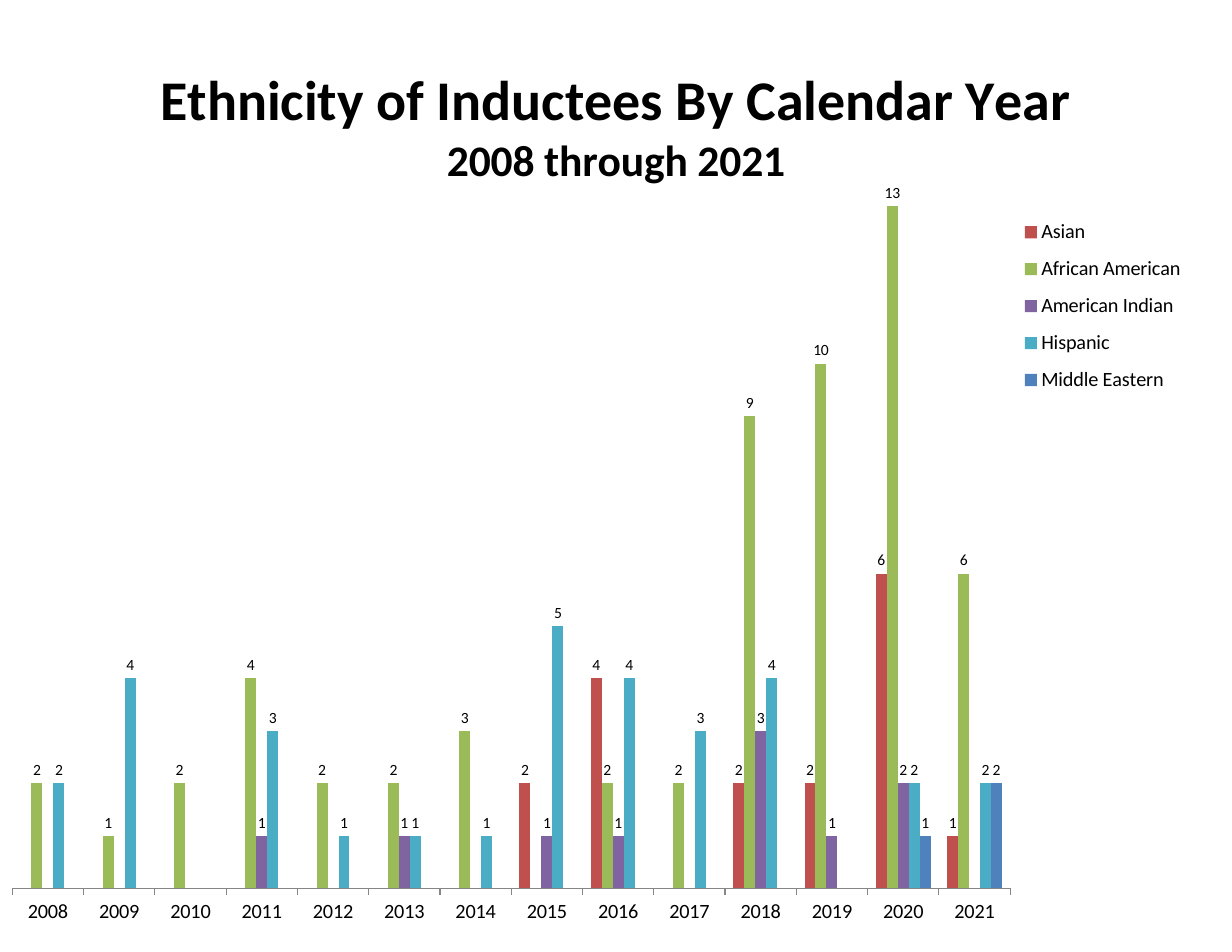
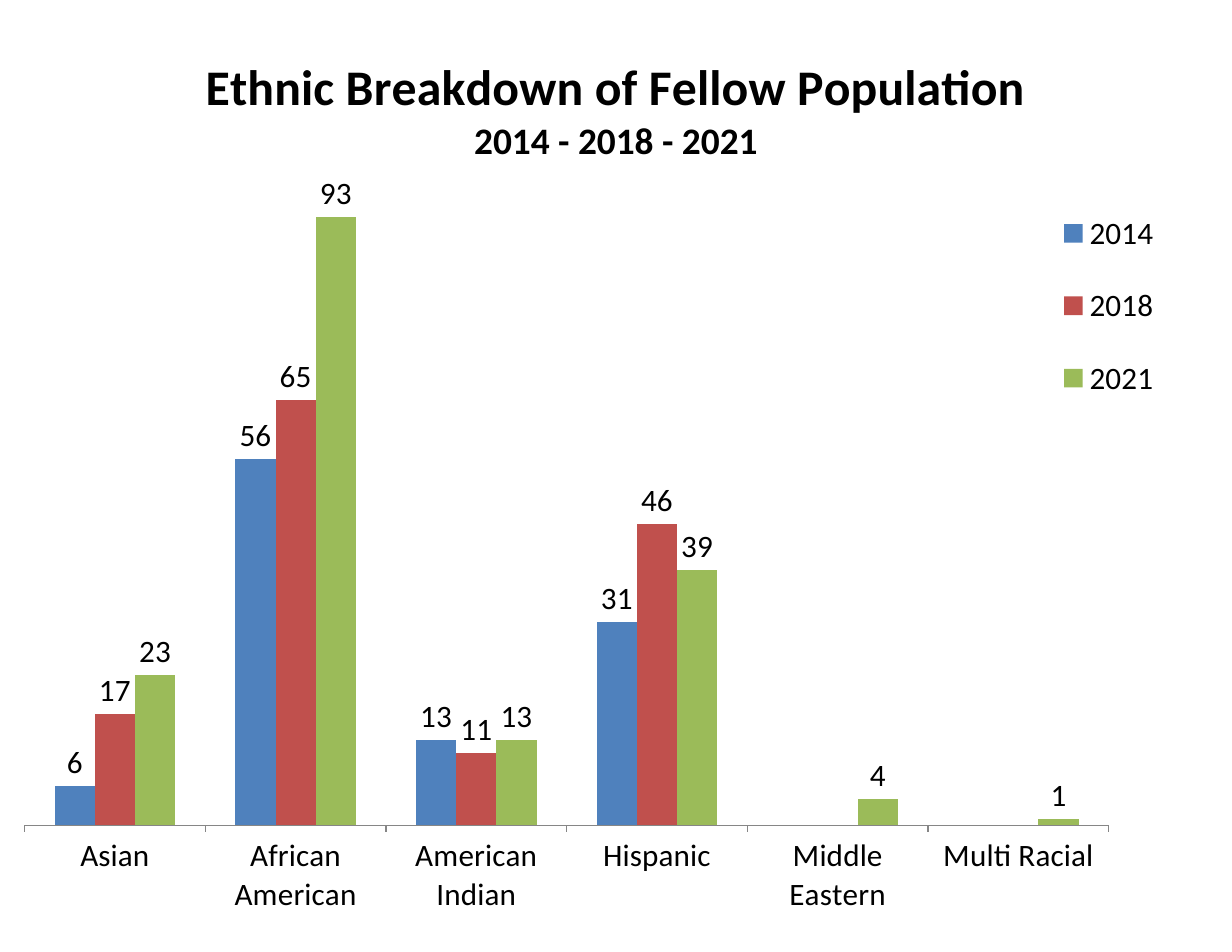
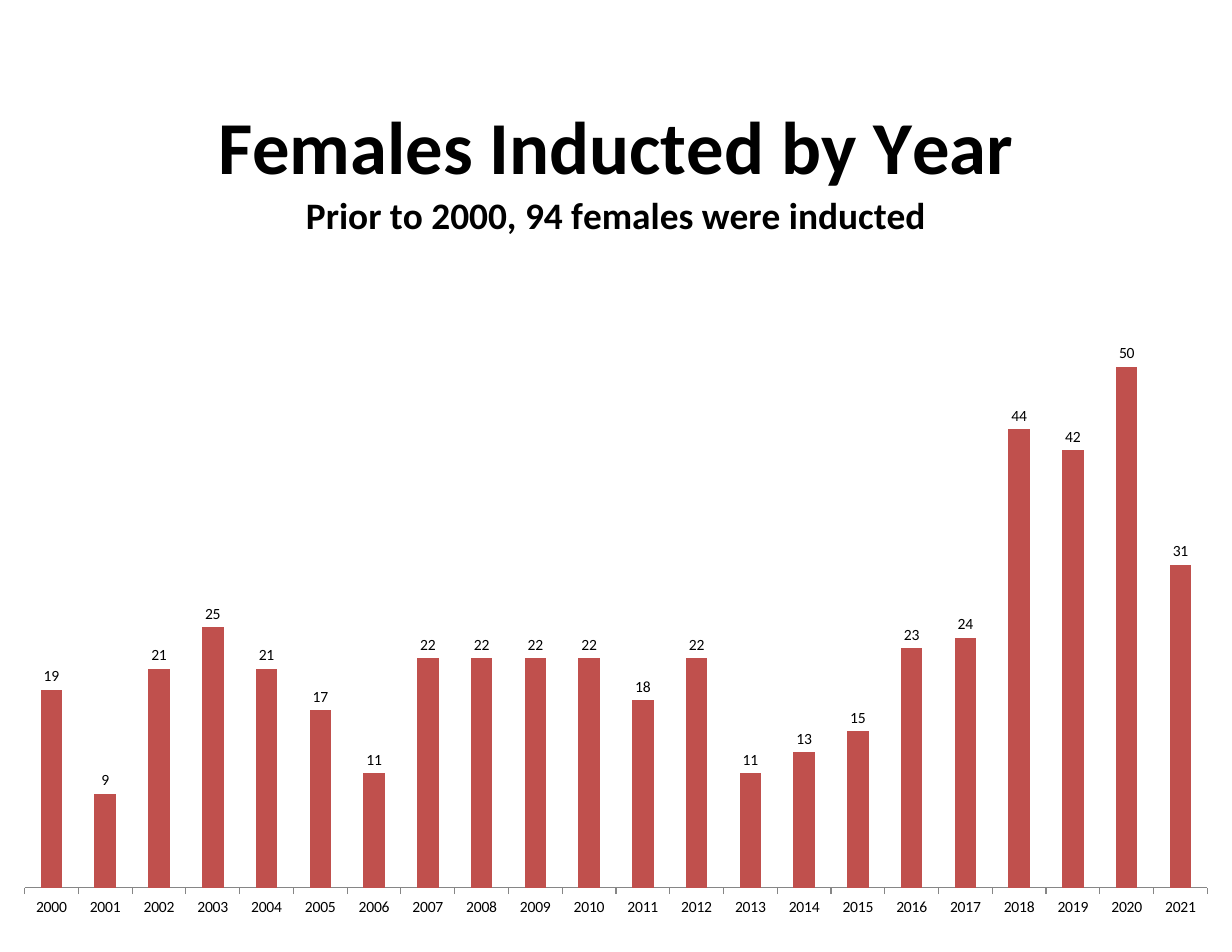
from dataclasses import dataclass
from typing import Optional

from lxml import etree
from pptx import Presentation
from pptx.chart.chart import Chart
from pptx.chart.data import CategoryChartData
from pptx.dml.color import RGBColor
from pptx.enum.chart import (XL_CHART_TYPE, XL_LABEL_POSITION,
                             XL_LEGEND_POSITION, XL_TICK_MARK)
from pptx.oxml.ns import qn
from pptx.util import Pt

CLUSTERED = XL_CHART_TYPE.COLUMN_CLUSTERED
OUTSIDE_END = XL_LABEL_POSITION.OUTSIDE_END
LEGEND_RIGHT = XL_LEGEND_POSITION.RIGHT
TICK_OUTSIDE = XL_TICK_MARK.OUTSIDE

# Shared style
BLACK = RGBColor(0x00, 0x00, 0x00)
AXIS_GREY = RGBColor(0x86, 0x86, 0x86)
BLUE = RGBColor(0x4F, 0x81, 0xBD)
RED = RGBColor(0xC0, 0x50, 0x4D)
GREEN = RGBColor(0x9B, 0xBB, 0x59)
PURPLE = RGBColor(0x80, 0x64, 0xA2)
TEAL = RGBColor(0x4B, 0xAC, 0xC6)
BASE_FONT = {"name": "Calibri", "bold": False}
TITLE_FONT = {"name": "Calibri", "bold": True}
PAGE_WIDTH, PAGE_HEIGHT = Pt(792), Pt(612)


@dataclass(frozen=True)
class Frame:
    """Part of a chart, as fractions of the chart's size."""
    x: float
    y: float
    w: float
    h: float


@dataclass(frozen=True)
class Series:
    name: str
    color: RGBColor
    values: tuple


@dataclass(frozen=True)
class ChartPage:
    title: str
    subtitle: str
    title_size: int
    subtitle_size: int
    top: int
    height: int
    categories: tuple
    series: tuple
    axis_maximum: int
    label_size: int
    axis_size: int
    plot_frame: Optional[Frame] = None
    legend_frame: Optional[Frame] = None


def years(first: int, last: int) -> tuple:
    return tuple(str(year) for year in range(first, last + 1))


PAGES = (
    ChartPage(
        "Ethnicity of Inductees By Calendar Year", "2008 through 2021", 36, 28,
        top=24, height=576, categories=years(2008, 2021),
        series=(
            Series("Asian", RED, (None, None, None, None, None, None, None,
                                  2, 4, None, 2, 2, 6, 1)),
            Series("African American", GREEN,
                   (2, 1, 2, 4, 2, 2, 3, None, 2, 2, 9, 10, 13, 6)),
            Series("American Indian", PURPLE,
                   (None, None, None, 1, None, 1, None,
                    1, 1, None, 3, 1, 2, None)),
            Series("Hispanic", TEAL,
                   (2, 4, None, 3, 1, 1, 1, 5, 4, 3, 4, None, 2, 2)),
            Series("Middle Eastern", BLUE, (None,) * 12 + (1, 2)),
        ),
        axis_maximum=14, label_size=10, axis_size=13,
        plot_frame=Frame(0.01, 0.13, 0.81, 0.82),
        legend_frame=Frame(0.82, 0.19, 0.15, 0.22),
    ),
    ChartPage(
        "Ethnic Breakdown of Fellow Population", "2014 - 2018 - 2021", 32, 24,
        top=18, height=576,
        categories=("Asian", "African American", "American Indian",
                    "Hispanic", "Middle Eastern", "Multi Racial"),
        series=(
            Series("2014", BLUE, (6, 56, 13, 31, None, None)),
            Series("2018", RED, (17, 65, 11, 46, None, None)),
            Series("2021", GREEN, (23, 93, 13, 39, 4, 1)),
        ),
        axis_maximum=100, label_size=20, axis_size=20,
        plot_frame=Frame(0.02, 0.16, 0.88, 0.73),
        legend_frame=Frame(0.85, 0.17, 0.1, 0.28),
    ),
    ChartPage(
        "Females Inducted by Year", "Prior to 2000, 94 females were inducted",
        48, 24, top=48, height=552, categories=years(2000, 2021),
        series=(
            Series("Series 1", RED,
                   (19, 9, 21, 25, 21, 17, 11, 22, 22, 22, 22,
                    18, 22, 11, 13, 15, 23, 24, 44, 42, 50, 31)),
        ),
        axis_maximum=60, label_size=10, axis_size=10,
    ),
)


def set_attributes(target, values: dict) -> None:
    for name, value in values.items():
        setattr(target, name, value)


def set_font(font, style: dict, size: int) -> None:
    set_attributes(font, {**style, "size": Pt(size)})
    font.color.rgb = BLACK


def set_layout(parent, index: int, frame: Frame, inner: bool) -> None:
    """Give a plot area or legend a fixed place in its chart."""
    for old in parent.findall(qn("c:layout")):
        parent.remove(old)
    layout = etree.Element(qn("c:layout"))
    manual = etree.SubElement(layout, qn("c:manualLayout"))
    settings = {"layoutTarget": "inner"} if inner else {}
    settings.update(xMode="edge", yMode="edge", x=frame.x, y=frame.y,
                    w=frame.w, h=frame.h)
    for name, value in settings.items():
        etree.SubElement(manual, qn(f"c:{name}")).set("val", str(value))
    parent.insert(index, layout)


def add_title(chart: Chart, page: ChartPage) -> None:
    chart.has_title = True
    frame = chart.chart_title.text_frame
    lines = ((page.title, page.title_size), (page.subtitle, page.subtitle_size))
    for number, (text, size) in enumerate(lines):
        para = frame.add_paragraph() if number else frame.paragraphs[0]
        span = para.add_run()
        span.text = text
        set_font(span.font, TITLE_FONT, size)


def style_axes(chart: Chart, page: ChartPage) -> None:
    set_attributes(chart.value_axis, {
        "visible": False, "has_major_gridlines": False,
        "minimum_scale": 0, "maximum_scale": page.axis_maximum})
    axis = chart.category_axis
    axis.major_tick_mark = TICK_OUTSIDE
    set_font(axis.tick_labels.font, BASE_FONT, page.axis_size)
    axis.format.line.color.rgb = AXIS_GREY
    axis.format.line.width = Pt(0.75)


def style_columns(chart: Chart, page: ChartPage) -> None:
    plot = chart.plots[0]
    set_attributes(plot, {"gap_width": 150, "overlap": 0,
                          "vary_by_categories": False})
    for columns, series in zip(plot.series, page.series):
        columns.format.fill.solid()
        columns.format.fill.fore_color.rgb = series.color
        columns.invert_if_negative = False
        labels = columns.data_labels
        set_attributes(labels, {"show_value": True, "position": OUTSIDE_END})
        set_font(labels.font, BASE_FONT, page.label_size)


def add_legend(chart: Chart, page: ChartPage) -> None:
    chart.has_legend = page.legend_frame is not None
    if page.legend_frame:
        set_attributes(chart.legend, {"position": LEGEND_RIGHT,
                                      "include_in_layout": False})
        set_font(chart.legend.font, BASE_FONT, page.axis_size)
        legend = chart.element.find(".//" + qn("c:legend"))
        set_layout(legend, 1, page.legend_frame, inner=False)


def add_chart_page(deck, page: ChartPage) -> None:
    data = CategoryChartData()
    data.categories = page.categories
    for series in page.series:
        data.add_series(series.name, series.values)
    slide = deck.slides.add_slide(deck.slide_layouts[6])
    chart = slide.shapes.add_chart(CLUSTERED, 0, Pt(page.top), PAGE_WIDTH,
                                   Pt(page.height), data).chart
    set_font(chart.font, BASE_FONT, page.label_size)
    add_title(chart, page)
    style_axes(chart, page)
    style_columns(chart, page)
    add_legend(chart, page)
    if page.plot_frame:
        plot_area = chart.element.find(".//" + qn("c:plotArea"))
        set_layout(plot_area, 0, page.plot_frame, inner=True)


def main() -> None:
    deck = Presentation()
    deck.slide_width, deck.slide_height = PAGE_WIDTH, PAGE_HEIGHT
    for page in PAGES:
        add_chart_page(deck, page)
    deck.save("out.pptx")


if __name__ == "__main__":
    main()
